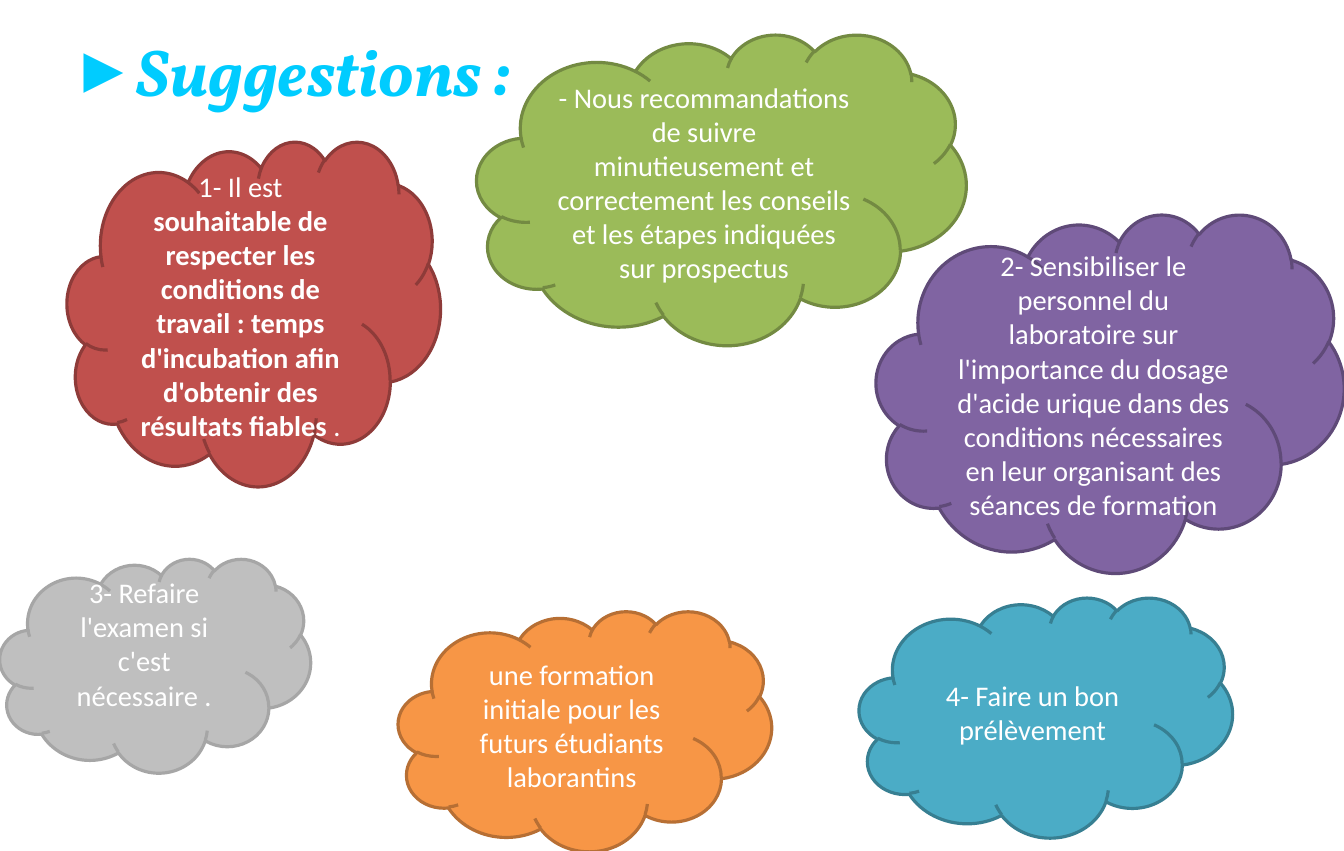
from lxml import etree
from pptx import Presentation
from pptx.dml.color import RGBColor
from pptx.enum.shapes import MSO_SHAPE
from pptx.enum.text import MSO_ANCHOR, PP_ALIGN
from pptx.oxml.ns import qn
from pptx.util import Inches, Pt

CLOUD = MSO_SHAPE.CLOUD
MIDDLE = MSO_ANCHOR.MIDDLE
LEFT, CENTER = PP_ALIGN.LEFT, PP_ALIGN.CENTER

# Fill colours, and the matching outline colours
FILLS = {"red": "C0504D", "teal": "4BACC6", "purple": "8064A2",
         "green": "9BBB59", "orange": "F79646", "grey": "BFBFBF"}
LINES = {"red": "8E3B39", "teal": "377F92", "purple": "5F4A78",
         "green": "738A42", "orange": "B76F34", "grey": "A6A6A6"}
INKS = {"title": "00CCFF", "cloud": "FFFFFF"}

# Colour, box, runs as (text, bold), bottom inset
CLOUDS = [
    ("red", (0.59, 1.24, 3.28, 3.03),
     [("1- Il est ", False),
      ("souhaitable de respecter les conditions de travail : temps "
       "d'incubation afin d'obtenir des résultats fiables ", True),
      (".", False)], 0.05),
    ("teal", (7.55, 5.25, 3.28, 2.11),
     [("4- Faire un bon prélèvement", False)], 0.05),
    ("purple", (7.7, 1.88, 4.11, 3.15),
     [("2- Sensibiliser le personnel du laboratoire sur l'importance du "
       "dosage d'acide urique dans des conditions nécessaires en leur "
       "organisant des séances de formation", False)], 0.05),
    ("green", (4.19, 0.3, 4.3, 2.73),
     [("- Nous recommandations de suivre minutieusement et correctement "
       "les conseils et les étapes indiquées sur prospectus", False)], 0.05),
    ("orange", (3.5, 5.37, 3.28, 2.11),
     [("une formation initiale pour les futurs étudiants laborantins",
       False)], 0.05),
    ("grey", (0, 4.91, 2.73, 1.88),
     [("3- Refaire l'examen si c'est nécessaire .", False)], 0.35),
]


def set_font(para, name, size, ink):
    font = para.font
    font.name, font.size = name, Pt(size)
    font.color.rgb = RGBColor.from_string(INKS[ink])
    return font


def add_bullet(para, char):
    props = para._p.get_or_add_pPr()
    props.set("marL", "0")
    props.set("indent", "0")
    face = etree.Element(qn("a:buFont"), typeface="Arial")
    mark = etree.Element(qn("a:buChar"), char=char)
    props.insert(0, face)
    props.insert(1, mark)


def put_title(slide, box, text):
    title = slide.shapes.title
    title.left, title.top, title.width, title.height = map(Inches, box)
    frame = title.text_frame
    frame.text = text
    frame.vertical_anchor = MIDDLE
    para = frame.paragraphs[0]
    para.alignment = LEFT
    font = set_font(para, "Vollkorn", 42, "title")
    font.bold = font.italic = True
    add_bullet(para, "►")


def add_cloud(slide, color, box, runs, bottom):
    cloud = slide.shapes.add_shape(CLOUD, *map(Inches, box))
    cloud.shadow.inherit = False
    cloud.fill.solid()
    cloud.fill.fore_color.rgb = RGBColor.from_string(FILLS[color])
    cloud.line.color.rgb = RGBColor.from_string(LINES[color])
    cloud.line.width = Pt(2)

    # Centred text
    frame = cloud.text_frame
    frame.word_wrap = True
    frame.vertical_anchor = MIDDLE
    frame.margin_bottom = Inches(bottom)
    para = frame.paragraphs[0]
    para.alignment = CENTER
    set_font(para, "Calibri", 18, "cloud")
    for text, bold in runs:
        run = para.add_run()
        run.text = text
        if bold:
            run.font.bold = True


def main():
    prs = Presentation()
    prs.slide_width, prs.slide_height = Inches(11.81), Inches(7.48)
    slide = prs.slides.add_slide(prs.slide_layouts[5])
    put_title(slide, (0.52, -0.01, 10.63, 1.25), "Suggestions\u00a0:")
    for cloud in CLOUDS:
        add_cloud(slide, *cloud)
    prs.save("out.pptx")


if __name__ == "__main__":
    main()
